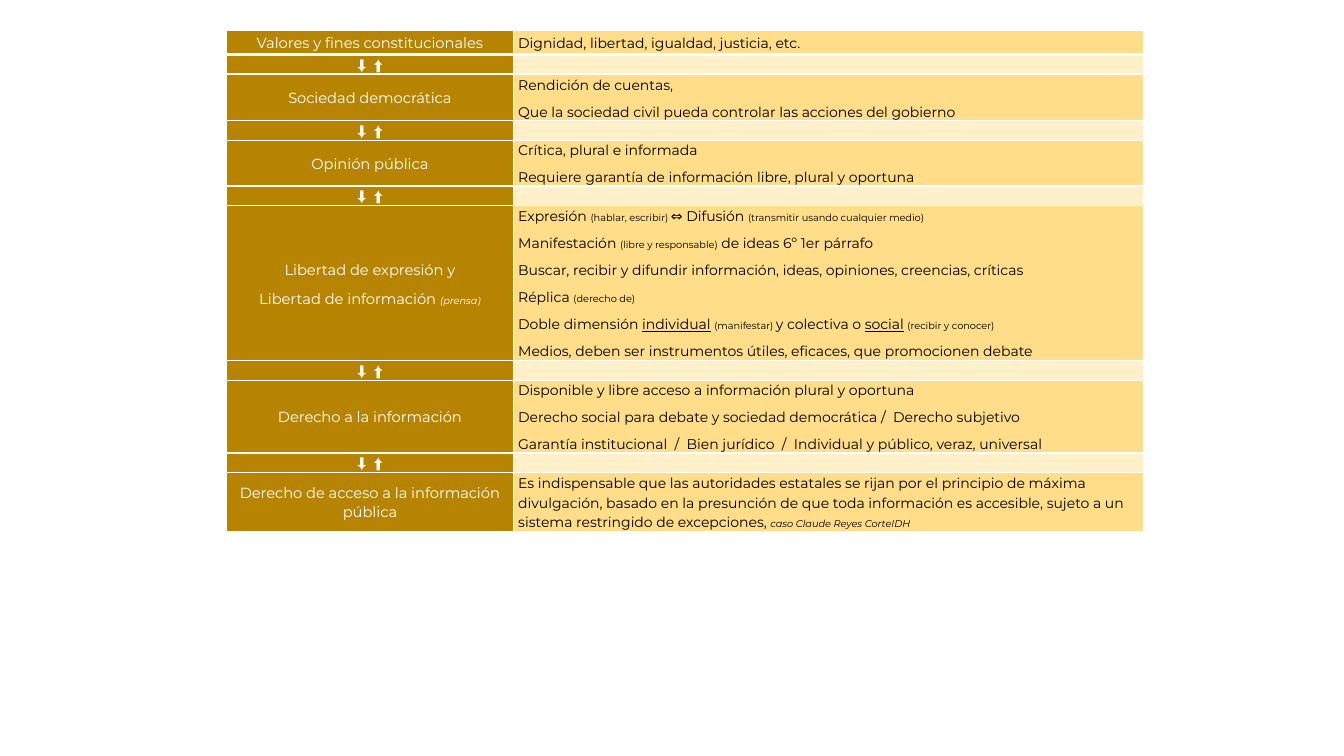
"""Builds a slide with a table linking constitutional values to access to information."""
from dataclasses import dataclass

from lxml.etree import SubElement
from pptx import Presentation
from pptx.dml.color import RGBColor
from pptx.enum.text import MSO_ANCHOR, PP_ALIGN
from pptx.oxml.ns import qn
from pptx.util import Inches, Pt


@dataclass(frozen=True)
class Theme:
    font: str = "Montserrat"
    topic_fill: str = "B68400"
    detail_fill: str = "FFDD89"
    link_fill: str = "FFF0C9"
    white: str = "FFFFFF"
    black: str = "000000"
    topic_size: float = 10.5
    detail_size: float = 10
    small_size: float = 7
    tight: float = 1.1
    loose: float = 1.15
    gap: float = 6
    border: float = 1
    heavy_border: float = 3


THEME = Theme()
SMALL, ITALIC, UNDERLINE = "small", "italic", "underline"
ARROWS = "⬇  ⬆"
LINK_HEIGHT = 0.18
LEFT, TOP = 2.25, 0.3
COLUMN_WIDTHS = (2.84, 6.25)

# Each level: row height, spacing of first detail line, topic lines, detail lines.
LEVELS = [
    (0.24, THEME.tight, [["Valores y fines constitucionales"]],
     [["Dignidad, libertad, igualdad, justicia, etc."]]),
    (0.42, THEME.loose, [["Sociedad democrática"]],
     [["Rendición de cuentas,"],
      ["Que la sociedad civil pueda controlar las acciones del gobierno"]]),
    (0.41, THEME.tight, [["Opinión pública"]],
     [["Crítica, plural e informada"],
      ["Requiere garantía de información libre, plural y oportuna"]]),
    (1.4, THEME.loose,
     [["Libertad de expresión y"],
      ["Libertad de información ", ("(prensa)", ITALIC)]],
     [["Expresión ", ("(hablar, escribir) ", SMALL), "⇔ Difusión ",
       ("(transmitir usando cualquier medio)", SMALL)],
      ["Manifestación ", ("(libre y responsable)", SMALL), " de ideas 6º 1er párrafo"],
      ["Buscar, recibir y difundir información, ideas, opiniones, creencias, críticas"],
      ["Réplica ", ("(derecho de)", SMALL)],
      ["Doble dimensión ", ("individual", UNDERLINE), " ", ("(manifestar) ", SMALL),
       "y colectiva o ", ("social", UNDERLINE), " ", ("(recibir y conocer)", SMALL)],
      ["Medios, deben ser instrumentos útiles, eficaces, que promocionen debate"]]),
    (0.66, THEME.tight, [["Derecho a la información"]],
     [["Disponible y libre acceso a información plural y oportuna"],
      ["Derecho social para debate y sociedad democrática /  Derecho subjetivo"],
      ["Garantía institucional  /  Bien jurídico  /  Individual y público, veraz, universal"]]),
    (0.53, THEME.loose, [["Derecho de acceso a la información pública"]],
     [["Es indispensable que las autoridades estatales se rijan por el principio de máxima "
       "divulgación, basado en la presunción de que toda información es accesible, sujeto a un "
       "sistema restringido de excepciones, ", ("caso Claude Reyes CorteIDH", ITALIC)]]),
]


def add_borders(cell, bottom_width):
    properties = cell._tc.get_or_add_tcPr()
    for side in "LRTB":
        width = bottom_width if side == "B" else THEME.border
        line = SubElement(properties, qn(f"a:ln{side}"), w=str(Pt(width)))
        fill = SubElement(line, qn("a:solidFill"))
        SubElement(fill, qn("a:srgbClr"), val=THEME.white)


def add_span(para, content):
    text, style = content if isinstance(content, tuple) else (content, None)
    span = para.add_run()
    span.text = text
    if style in (SMALL, ITALIC):
        span.font.size = Pt(THEME.small_size)
    if style == ITALIC:
        span.font.italic = True
    if style == UNDERLINE:
        span.font.underline = True


def fill_cell(cell, lines, fill, color, size, alignment, spacings, bottom_width):
    add_borders(cell, bottom_width)
    cell.fill.solid()
    cell.fill.fore_color.rgb = RGBColor.from_string(fill)
    cell.vertical_anchor = MSO_ANCHOR.MIDDLE
    cell.margin_left = cell.margin_right = Inches(0.05)
    cell.margin_top = cell.margin_bottom = 0
    lead_spacing, next_spacing = spacings
    for index, spans in enumerate(lines):
        para = cell.text_frame.add_paragraph() if index else cell.text_frame.paragraphs[0]
        para.alignment = alignment
        para.line_spacing = next_spacing if index else lead_spacing
        para.space_before = Pt(THEME.gap if index else 0)
        para.font.name = THEME.font
        para.font.size = Pt(size)
        para.font.color.rgb = RGBColor.from_string(color)
        for content in spans:
            add_span(para, content)
        if not spans:
            SubElement(para._p, qn("a:endParaRPr"), sz=str(int(size * 100)))


def build_rows():
    rows = []
    for level in LEVELS:
        if rows:
            rows.append((LINK_HEIGHT, THEME.tight, [[ARROWS]], [[]]))
        rows.append(level)
    return rows


def main():
    deck = Presentation()
    deck.slide_width, deck.slide_height = Inches(13.33), Inches(7.5)
    page = deck.slides.add_slide(deck.slide_layouts[6])
    rows = build_rows()
    table = page.shapes.add_table(
        len(rows), len(COLUMN_WIDTHS), Inches(LEFT), Inches(TOP),
        Inches(sum(COLUMN_WIDTHS)), Inches(sum(row[0] for row in rows))).table
    table.first_row = table.horz_banding = False
    for column, width in zip(table.columns, COLUMN_WIDTHS):
        column.width = Inches(width)
    for index, (height, lead_spacing, topic, details) in enumerate(rows):
        table.rows[index].height = Inches(height)
        bottom_width = THEME.border if index else THEME.heavy_border
        topic_spacing = THEME.loose if len(topic) > 1 else THEME.tight
        fill_cell(table.cell(index, 0), topic, THEME.topic_fill, THEME.white,
                  THEME.topic_size, PP_ALIGN.CENTER, (topic_spacing, topic_spacing), bottom_width)
        detail_fill = THEME.detail_fill if details[0] else THEME.link_fill
        fill_cell(table.cell(index, 1), details, detail_fill, THEME.black,
                  THEME.detail_size, PP_ALIGN.LEFT, (lead_spacing, THEME.tight), bottom_width)
    deck.save("out.pptx")


if __name__ == "__main__":
    main()
